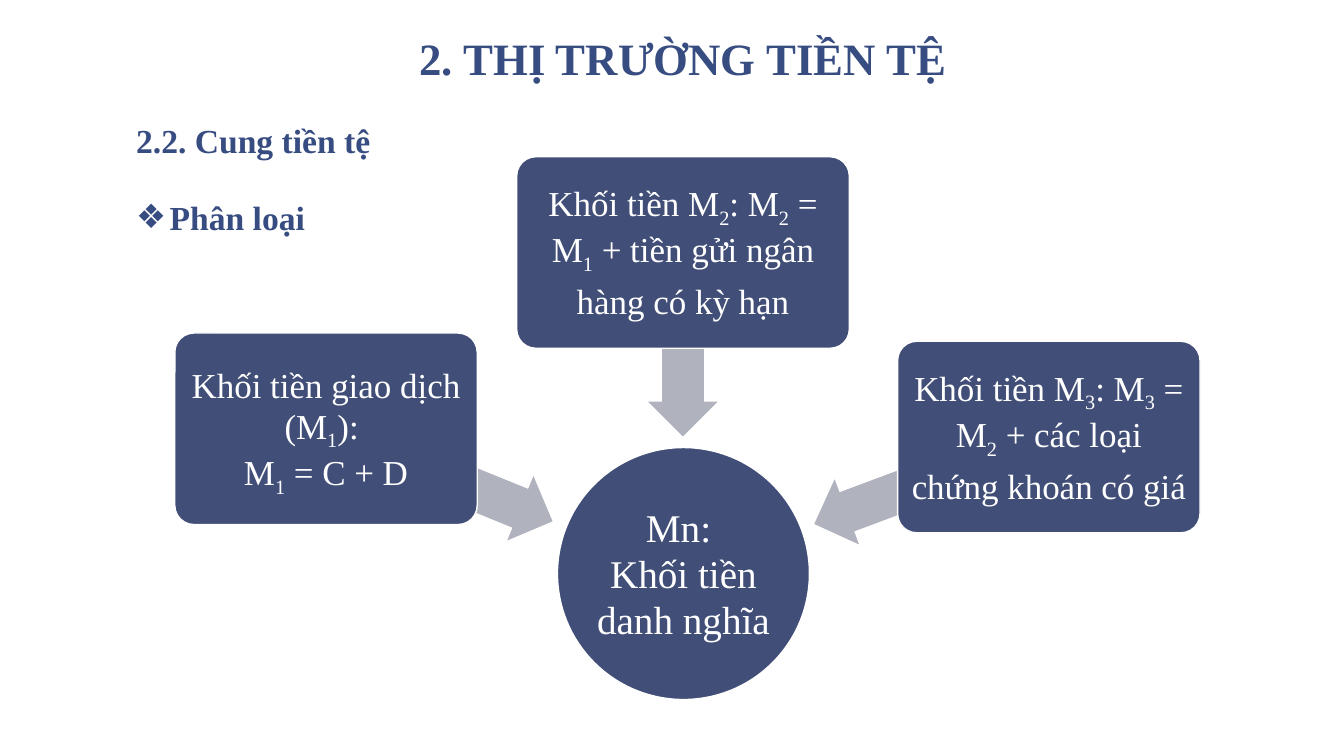
"""Build the slide on the classification of money supply."""
from dataclasses import dataclass

import lxml.etree
import pptx
import pptx.dml.color
import pptx.enum.shapes
import pptx.enum.text
import pptx.oxml.ns
import pptx.util

Pt = pptx.util.Pt
RGBColor = pptx.dml.color.RGBColor
MSO_SHAPE = pptx.enum.shapes.MSO_SHAPE
MSO_ANCHOR = pptx.enum.text.MSO_ANCHOR
PP_ALIGN = pptx.enum.text.PP_ALIGN

HEADING = RGBColor(0x37, 0x4C, 0x81)
NODE = RGBColor(0x41, 0x4E, 0x77)
ARROW = RGBColor(0xB0, 0xB2, 0xBD)
WHITE = RGBColor(0xFF, 0xFF, 0xFF)
FONT = "Times New Roman"


@dataclass(frozen=True)
class Node:
    kind: int
    left: float
    top: float
    width: float
    height: float
    text: str
    size: float = 25
    inset: float = 3.6


@dataclass(frozen=True)
class Arrow:
    left: float
    top: float
    width: float
    rotation: float
    height: float = 49.7


ARROWS = [
    Arrow(226.1, 314.6, 175, 202.1),
    Arrow(421.9, 221, 131.8, 270),
    Arrow(576, 318.2, 178.6, 339.5),
]
BOX = MSO_SHAPE.ROUNDED_RECTANGLE
NODES = [
    Node(MSO_SHAPE.OVAL, 398.2, 319.7, 180, 180, "Mn: \nKhối tiền danh nghĩa", 28, 1.4),
    Node(BOX, 124.9, 237.9, 216, 136.8, "Khối tiền giao dịch (M_1_): \nM_1_ = C + D"),
    Node(BOX, 369.1, 112, 237.6, 136.8,
         "Khối tiền M_2_: M_2_ = M_1_ + tiền gửi ngân hàng có kỳ hạn"),
    Node(BOX, 641.2, 243.8, 216, 136.8,
         "Khối tiền M_3_: M_3_ = M_2_ + các loại chứng khoán có giá"),
]


def style_font(font, size: float, color: RGBColor, bold: bool = False) -> None:
    font.name = FONT
    font.size = Pt(size)
    font.bold = bold
    font.color.rgb = color


def set_insets(tf, x: float, y: float) -> None:
    tf.margin_left = tf.margin_right = Pt(x)
    tf.margin_top = tf.margin_bottom = Pt(y)
    tf.word_wrap = True
    tf.auto_size = pptx.enum.text.MSO_AUTO_SIZE.NONE


def place(sp, left: float, top: float, width: float, height: float) -> None:
    sp.left, sp.top, sp.width, sp.height = map(Pt, (left, top, width, height))


def set_bullet(p, char: str, indent: float) -> None:
    pPr = p._p.get_or_add_pPr()
    pPr.set("marL", str(Pt(indent)))
    pPr.set("indent", str(-Pt(indent)))
    tag = "a:buChar" if char else "a:buNone"
    bullet = lxml.etree.SubElement(pPr, pptx.oxml.ns.qn(tag))
    if char:
        bullet.set("char", char)


def add_shape(slide, kind: int, item: Node | Arrow, fill: RGBColor):
    sp = slide.shapes.add_shape(
        kind, Pt(item.left), Pt(item.top), Pt(item.width), Pt(item.height))
    sp.shadow.inherit = False
    sp.fill.solid()
    sp.fill.fore_color.rgb = fill
    return sp


def add_arrow(slide, arrow: Arrow) -> None:
    sp = add_shape(slide, MSO_SHAPE.LEFT_ARROW, arrow, ARROW)
    sp.adjustments[0] = 0.6
    sp.adjustments[1] = 0.5
    sp.rotation = arrow.rotation
    sp.line.fill.background()


def add_node(slide, node: Node) -> None:
    sp = add_shape(slide, node.kind, node, NODE)
    if node.kind == BOX:
        sp.adjustments[0] = 0.1
    sp.line.color.rgb = WHITE
    sp.line.width = Pt(1)
    tf = sp.text_frame
    set_insets(tf, node.inset, node.inset)
    tf.vertical_anchor = MSO_ANCHOR.MIDDLE
    for i, line in enumerate(node.text.split("\n")):
        p = tf.add_paragraph() if i else tf.paragraphs[0]
        p.alignment = PP_ALIGN.CENTER
        p.line_spacing = Pt(33)
        for j, part in enumerate(line.split("_")):
            r = p.add_run()
            r.text = part
            style_font(r.font, node.size, WHITE)
            if j % 2:
                r._r.get_or_add_rPr().set("baseline", "-25000")


def fill_title(sp) -> None:
    place(sp, 87.8, 5.8, 800, 59.8)
    tf = sp.text_frame
    tf.text = "2. THỊ TRƯỜNG TIỀN TỆ"
    set_insets(tf, 9.4, 5)
    tf.vertical_anchor = MSO_ANCHOR.BOTTOM
    p = tf.paragraphs[0]
    p.alignment = PP_ALIGN.CENTER
    p.line_spacing = 0.85
    style_font(p.runs[0].font, 32, HEADING, True)


def fill_body(sp) -> None:
    place(sp, 87.8, 66.2, 800, 419.8)
    tf = sp.text_frame
    tf.text = "2.2. Cung tiền tệ\nPhân loại"
    set_insets(tf, 9.4, 5)
    for p, char, indent, before in zip(tf.paragraphs, ("", "❖"), (0, 24), (0, 12)):
        set_bullet(p, char, indent)
        p.line_spacing = 1.5
        p.space_before = Pt(before)
        style_font(p.runs[0].font, 24, HEADING, True)


def main() -> None:
    prs = pptx.Presentation()
    prs.slide_width, prs.slide_height = Pt(960), Pt(540)
    slide = prs.slides.add_slide(prs.slide_layouts[1])
    fill_title(slide.shapes.title)
    fill_body(slide.placeholders[1])
    for arrow in ARROWS:
        add_arrow(slide, arrow)
    for node in NODES:
        add_node(slide, node)
    prs.save("out.pptx")


if __name__ == "__main__":
    main()
